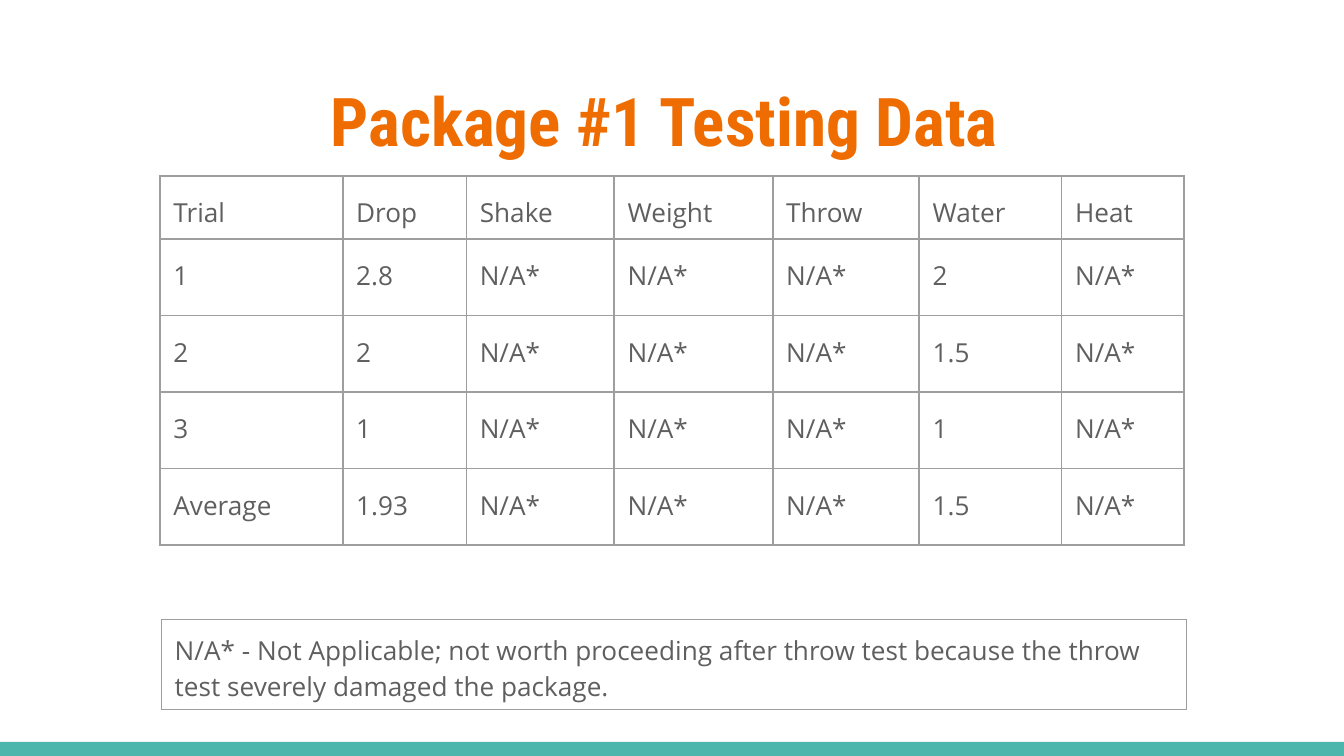
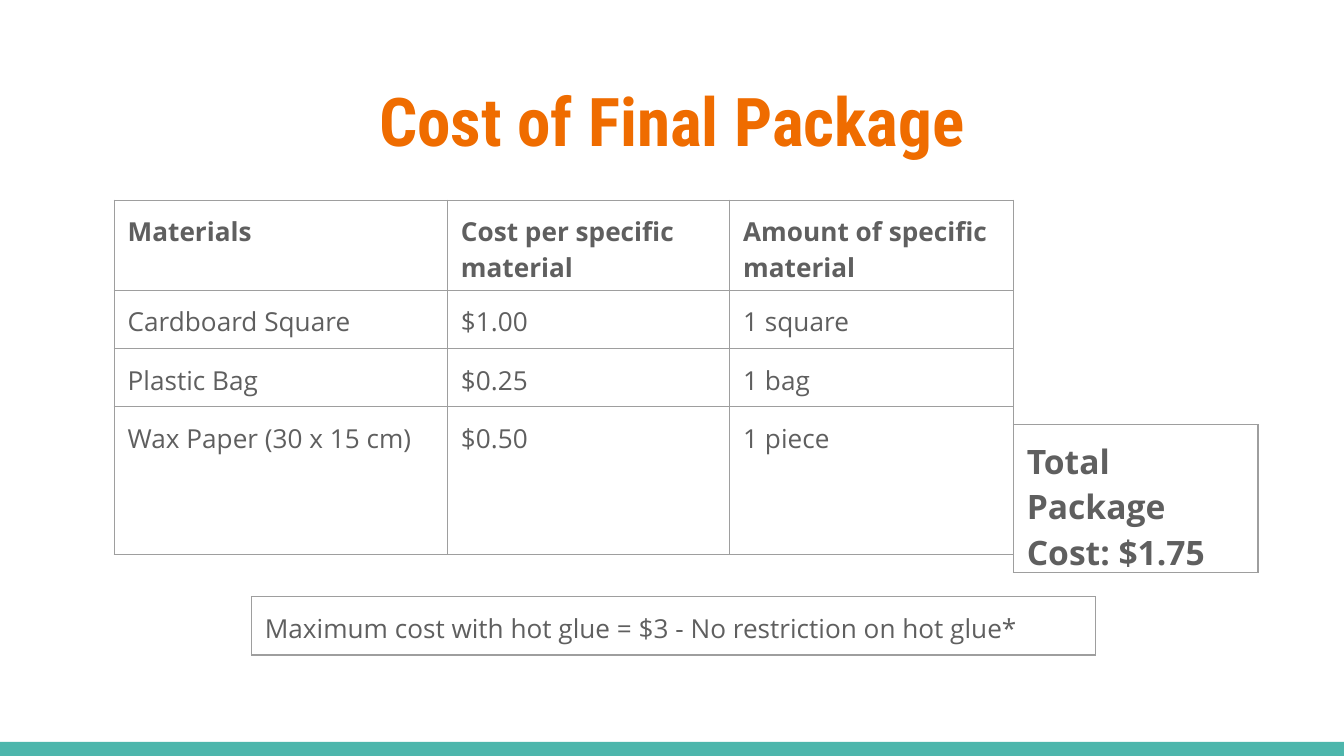
from lxml import etree
from pptx import Presentation
from pptx import util as u
from pptx.dml import color
from pptx.enum import shapes, text
from pptx.oxml import ns

ORANGE = "EF6C00"
TEAL = "4DB6AC"
GRAY = "5F5F5F"
BORDER = "9E9E9E"
WHITE = "FFFFFF"
PLAIN_TABLE = "{2D5ABB26-0587-4C30-8999-92F81FD0307C}"
TITLE_FORMAT = {"name": "Roboto Condensed", "size": u.Pt(36), "bold": True}
BODY_FORMAT = {"name": "Open Sans", "size": u.Pt(14), "bold": False}


def rgb(value):
    return color.RGBColor.from_string(value)


def apply_format(target, values):
    for name, value in values.items():
        setattr(target, name, value)


class Deck:
    margin = u.Inches(0.1)

    def __init__(self):
        self.presentation = Presentation()
        self.presentation.slide_width = u.Inches(10)
        self.presentation.slide_height = u.Inches(5.625)
        self.slide = None

    def add_slide(self, title):
        self.slide = self.presentation.slides.add_slide(self.presentation.slide_layouts[6])
        background = self.slide.background.fill
        background.solid()
        background.fore_color.rgb = rgb(WHITE)
        self.add_band()
        self.add_title(title)

    def add_band(self):
        band = self.slide.shapes.add_shape(
            shapes.MSO_SHAPE.RECTANGLE, 0, u.Inches(5.52), u.Inches(10), u.Inches(0.11))
        band.shadow.inherit = False
        band.fill.solid()
        band.fill.fore_color.rgb = rgb(TEAL)
        band.line.fill.background()

    def add_title(self, title):
        box = self.slide.shapes.add_textbox(*map(u.Inches, (0.34, 0.49, 9.32, 0.77)))
        frame = box.text_frame
        apply_format(frame, {
            "word_wrap": True, "vertical_anchor": text.MSO_ANCHOR.TOP,
            "margin_left": self.margin, "margin_right": self.margin,
            "margin_top": self.margin, "margin_bottom": self.margin})
        frame.paragraphs[0].alignment = text.PP_ALIGN.CENTER
        self.add_run(frame.paragraphs[0], title, TITLE_FORMAT, ORANGE)

    def add_run(self, paragraph, content, values, hex_color):
        run = paragraph.add_run()
        run.text = content
        apply_format(run.font, values)
        run.font.color.rgb = rgb(hex_color)

    def add_table(self, left, top, widths, heights, rows, line_spacing=1.0,
                  line_width=0.75, row_formats=None, row_borders=None):
        frame = self.slide.shapes.add_table(
            len(rows), len(widths), u.Inches(left), u.Inches(top),
            u.Inches(sum(widths)), u.Inches(sum(heights)))
        table = frame.table
        apply_format(table, {"first_row": False, "horz_banding": False})
        frame.element.find(".//" + ns.qn("a:tableStyleId")).text = PLAIN_TABLE
        for column, width in zip(table.columns, widths):
            column.width = u.Inches(width)
        for index, (row, height, contents) in enumerate(zip(table.rows, heights, rows)):
            row.height = u.Inches(height)
            values = BODY_FORMAT | (row_formats or {}).get(index, {})
            sides = (row_borders or {}).get(index, "LRTB")
            for cell, content in zip(row.cells, contents):
                self.fill_cell(cell, content, values, line_spacing)
                self.add_borders(cell, sides, line_width)
                cell.fill.background()

    def fill_cell(self, cell, content, values, line_spacing):
        apply_format(cell, {
            "margin_left": self.margin, "margin_right": self.margin,
            "margin_top": self.margin, "margin_bottom": self.margin,
            "vertical_anchor": text.MSO_ANCHOR.TOP})
        paragraph = cell.text_frame.paragraphs[0]
        paragraph.line_spacing = line_spacing
        self.add_run(paragraph, content, values, GRAY)

    def add_borders(self, cell, sides, line_width):
        properties = cell._tc.get_or_add_tcPr()
        for side in "LRTB":
            line = etree.SubElement(properties, ns.qn("a:ln" + side))
            if side in sides:
                line.set("w", str(u.Pt(line_width)))
                fill = etree.SubElement(line, ns.qn("a:solidFill"))
                etree.SubElement(fill, ns.qn("a:srgbClr"), val=BORDER)
            else:
                etree.SubElement(line, ns.qn("a:noFill"))


def build_testing_slide(deck):
    deck.add_slide("Package #1 Testing Data ")
    deck.add_table(1.2, 4.61, [7.63], [0.42], [[
        "N/A* - Not Applicable; not worth proceeding after throw test "
        "because the throw test severely damaged the package."]])
    results = [("1", "2.8", "2"), ("2", "2", "1.5"), ("3", "1", "1"),
               ("Average", "1.93", "1.5")]
    rows = [["Trial", "Drop", "Shake", "Weight", "Throw", "Water", "Heat"]]
    rows += [[trial, drop, *["N/A*"] * 3, water, "N/A*"] for trial, drop, water in results]
    deck.add_table(1.19, 1.31, [1.36, 0.92, 1.1, 1.18, 1.09, 1.06, 0.91],
                   [0.43] + [0.57] * 4, rows, line_spacing=1.15, line_width=1)


def build_cost_slide(deck):
    deck.add_slide("Cost of Final Package")
    heights = [0.67, 0.43, 0.43, 1.1]
    deck.add_table(0.85, 1.49, [2.48, 2.1, 2.11], heights, [
        ["Materials", "Cost per specific material", "Amount of specific material"],
        ["Cardboard Square", "$1.00", "1 square"],
        ["Plastic Bag", "$0.25", "1 bag"],
        ["Wax Paper (30 x 15 cm)", "$0.50", "1 piece"],
    ], row_formats={0: {"bold": True}})
    deck.add_table(1.87, 4.44, [6.28], [0.32], [[
        "Maximum cost with hot glue = $3 - No restriction on hot glue*"]])
    deck.add_table(7.54, 1.49, [1.82], heights,
                   [[""], [""], [""], ["Total Package Cost: $1.75"]],
                   row_formats={3: {"bold": True, "size": u.Pt(18)}},
                   row_borders={0: "L", 1: "L", 2: "LB"})


def main():
    deck = Deck()
    build_testing_slide(deck)
    build_cost_slide(deck)
    deck.presentation.save("out.pptx")


if __name__ == "__main__":
    main()
